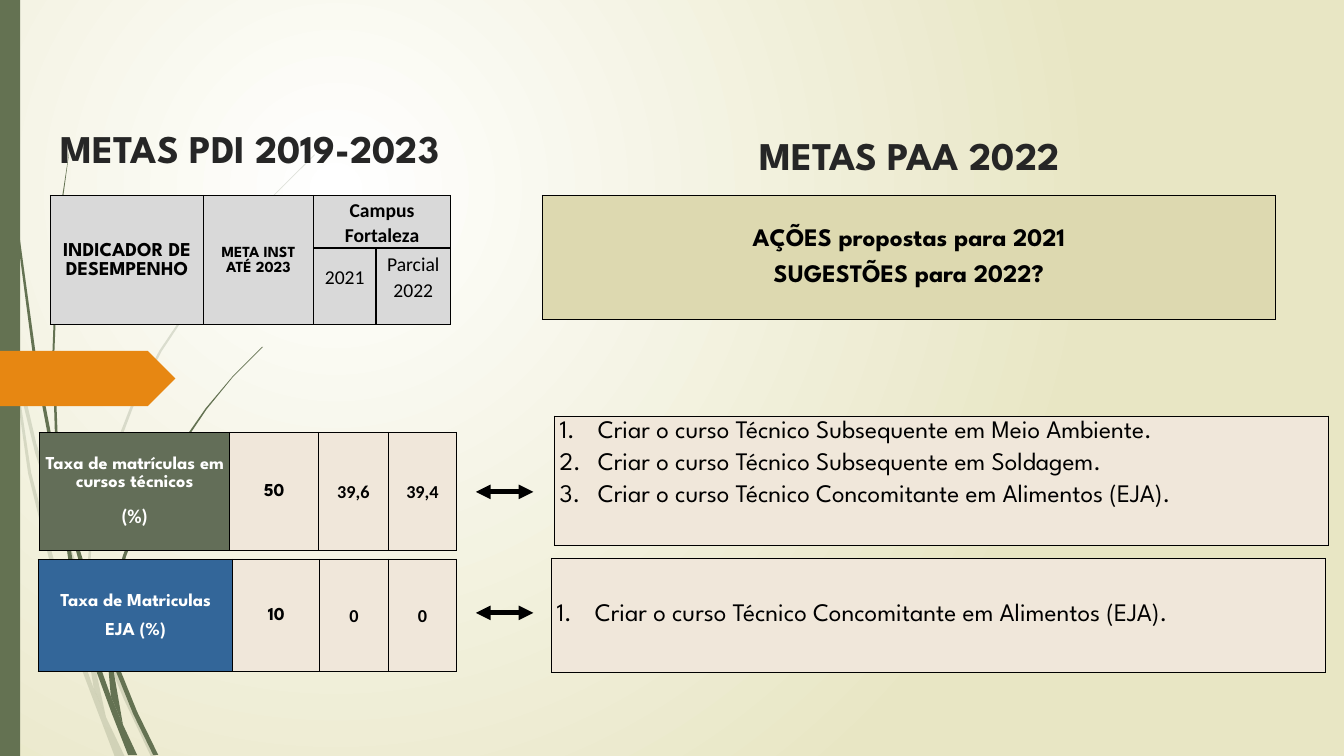
"""Build the slide that compares PDI targets with PAA 2022 actions."""
from dataclasses import dataclass, field

from lxml import etree
from pptx import Presentation, util as u
from pptx.dml.color import RGBColor
from pptx.enum import shapes as sh, text as tx
from pptx.oxml import ns

PX = 9144
WIDE, HIGH = 1333, 750
LEAGUE, PLAIN = "League Spartan", "Calibri"
HUES = {
    "white": "FFFFFF", "edge": "E8E6C4", "moss": "647252", "amber": "E78712",
    "black": "000000", "ink": "262626", "olive": "636E58", "blue": "336699",
    "sand": "F0E7DA", "straw": "DDD9B0", "grey": "D9D9D9",
}
MID, TOP, LOW = (tx.MSO_ANCHOR.MIDDLE, tx.MSO_ANCHOR.TOP, tx.MSO_ANCHOR.BOTTOM)


@dataclass
class Line:
    text: str
    form: dict = field(default_factory=dict)


@dataclass
class Cell:
    lines: list[Line]
    fill: str
    anchor: tx.MSO_ANCHOR = MID
    above: int = 1
    below: int = 0


@dataclass
class Grid:
    left: int
    top: int
    cols: list[int]
    rows: list[int]
    cells: dict[tuple[int, int], Cell]
    spans: list[tuple[int, int, int, int]] = field(default_factory=list)


@dataclass
class Title:
    text: str
    box: tuple[int, int, int, int]
    anchor: tx.MSO_ANCHOR


def px(num: float) -> u.Emu:
    return u.Emu(round(num * PX))


def hue(name: str) -> RGBColor:
    return RGBColor.from_string(HUES[name])


def add(host, tag: str, **attrs: str):
    return etree.SubElement(host, ns.qn(tag), attrs)


def write(para, text: str, size: float = 13, font: str = LEAGUE, tint: str = "black",
          bold: bool = True, space: float = 1.07, after: float = 8, item: bool = False) -> None:
    para.alignment = tx.PP_ALIGN.JUSTIFY if item else tx.PP_ALIGN.CENTER
    para.line_spacing, para.space_after = space, u.Pt(after)
    if item:
        props = para._p.get_or_add_pPr()
        props.set("marL", str(px(38)))
        props.set("indent", str(-px(38)))
        add(props, "a:buFont", typeface="+mj-lt")
        add(props, "a:buAutoNum", type="arabicPeriod")
    run = para.add_run()
    run.text = text
    run.font.size, run.font.name, run.font.bold = u.Pt(size), font, bold
    run.font.color.rgb = hue(tint)


def fill_text(frame, lines: list[Line]) -> None:
    frame.word_wrap = True
    for spot, line in enumerate(lines):
        para = frame.add_paragraph() if spot else frame.paragraphs[0]
        write(para, line.text, **line.form)


def edge(cell) -> None:
    props = cell._tc.get_or_add_tcPr()
    for spot, side in enumerate("LRTB"):
        rule = etree.Element(ns.qn(f"a:ln{side}"), {"w": str(u.Pt(1))})
        add(add(rule, "a:solidFill"), "a:srgbClr", val=HUES["black"])
        props.insert(spot, rule)


def draw_grid(slide, grid: Grid) -> None:
    table = slide.shapes.add_table(
        len(grid.rows), len(grid.cols), px(grid.left), px(grid.top),
        px(sum(grid.cols)), px(sum(grid.rows))).table
    table.first_row = table.horz_banding = False
    for col, wide in zip(table.columns, grid.cols):
        col.width = px(wide)
    for row, high in zip(table.rows, grid.rows):
        row.height = px(high)
    for cell in table.iter_cells():
        edge(cell)
    for row, col, last, end in grid.spans:
        table.cell(row, col).merge(table.cell(last, end))
    for (row, col), data in grid.cells.items():
        cell = table.cell(row, col)
        cell.fill.solid()
        cell.fill.fore_color.rgb = hue(data.fill)
        cell.vertical_anchor = data.anchor
        cell.margin_left = cell.margin_right = px(5)
        cell.margin_top, cell.margin_bottom = px(data.above), px(data.below)
        fill_text(cell.text_frame, data.lines)


def draw_title(slide, title: Title) -> None:
    frame = slide.shapes.add_textbox(*map(px, title.box)).text_frame
    frame.vertical_anchor = title.anchor
    fill_text(frame, [Line(title.text, dict(size=28, tint="ink", space=1.0, after=0))])


def draw_arrow(slide, mid: int) -> None:
    line = slide.shapes.add_connector(sh.MSO_CONNECTOR.STRAIGHT, px(472), px(mid), px(529), px(mid))
    line.line.width = u.Pt(3.5)
    line.line.color.rgb = hue("black")
    stroke = line.line._get_or_add_ln()
    for tag in ("a:headEnd", "a:tailEnd"):
        add(stroke, tag, type="triangle")
    add(line._element.spPr, "a:effectLst")


def paint(shape, tint: str, alpha: int = 100) -> None:
    shape.shadow.inherit = False
    shape.fill.solid()
    shape.fill.fore_color.rgb = hue(tint)
    shape.line.fill.background()
    if alpha < 100:
        add(shape._element.spPr.find(".//" + ns.qn("a:srgbClr")), "a:alpha", val=str(alpha * 1000))


def draw_blade(slide, dots: list[tuple[int, int]], alpha: int) -> None:
    pen = slide.shapes.build_freeform(*dots[0], scale=float(PX))
    pen.add_line_segments(dots[1:], close=True)
    paint(pen.convert_to_shape(), "moss", alpha)


def draw_back(slide) -> None:
    fill = slide.background.fill
    fill.gradient()
    for stop, name in zip(fill.gradient_stops, ("white", "edge")):
        stop.color.rgb = hue(name)
    grad = slide.element.find(".//" + ns.qn("a:gradFill"))
    grad.remove(grad.find(ns.qn("a:lin")))
    add(add(grad, "a:path", path="circle"), "a:fillToRect",
        l="50000", t="50000", r="100000", b="100000")


PALE = [
    [(11, 350), (9, 322), (0, 282), (0, 299), (10, 344)],
    [(58, 522), (84, 599), (85, 586), (62, 520), (36, 440), (14, 345), (17, 376), (35, 450)],
    [(92, 607), (88, 596), (88, 610), (123, 694), (150, 751), (155, 751), (127, 692)],
    [(93, 683), (70, 619), (31, 469), (17, 376), (11, 350), (28, 470), (65, 621), (92, 693),
     (114, 751), (124, 751), (105, 711)],
    [(84, 599), (87, 646), (93, 683), (105, 711), (91, 646), (88, 608)],
    [(88, 584), (92, 522), (110, 462), (132, 404), (160, 349), (229, 245), (268, 198), (312, 154),
     (312, 153), (268, 197), (228, 244), (158, 348), (130, 402), (107, 461), (90, 521), (85, 584),
     (84, 599), (88, 610)],
]
DARK = [
    [(7, 110), (17, 233), (33, 355), (56, 477), (64, 505), (60, 472), (55, 453), (36, 355),
     (19, 232), (8, 109), (5, 48), (4, 0), (3, 0), (4, 48)],
    [(88, 592), (106, 645), (106, 631), (93, 590), (75, 532), (60, 472), (64, 505)],
    [(113, 649), (110, 641), (111, 656), (132, 708), (152, 749), (157, 749), (136, 706)],
    [(110, 691), (98, 657), (72, 556), (64, 505), (57, 477), (68, 557), (93, 659), (111, 708),
     (127, 749), (136, 749), (122, 719)],
    [(60, 472), (58, 453), (54, 349), (58, 245), (63, 193), (70, 141), (62, 193), (56, 245),
     (52, 349), (55, 449)],
    [(111, 633), (115, 592), (125, 552), (140, 513), (158, 476), (205, 406), (231, 374), (261, 344),
     (260, 344), (231, 373), (204, 405), (156, 474), (137, 512), (122, 551), (111, 590), (106, 631),
     (106, 645), (111, 656)],
    [(106, 645), (110, 691), (122, 719), (111, 656)],
]
HEAD = dict(size=14, after=0)
SMALL = dict(size=11, after=0)
NUM = dict(font=PLAIN)
LIGHT = dict(size=14, font=PLAIN, bold=False, after=0)
PALE_INK = dict(tint="white")
LIST = dict(size=18, bold=False, space=1.0, after=6, item=True)
CALL = dict(size=18)
FOOD = Line("Criar o curso Técnico Concomitante em Alimentos (EJA).", LIST)


def rate(left: int, top: int, cols: list[int], high: int, label: Cell,
         goal: str, year: str, part: str) -> Grid:
    cells = {(0, 0): label, (0, 1): Cell([Line(goal)], "sand")}
    for col, num in enumerate((year, part), 2):
        cells[0, col] = Cell([Line(num, NUM)], "sand")
    return Grid(left, top, cols, [high], cells)


GRIDS = [
    rate(39, 429, [189, 88, 69, 68], 117,
         Cell([Line("Taxa de matrículas em cursos técnicos", PALE_INK),
               Line("(%)", dict(size=14, font=PLAIN, tint="white"))], "olive"), "50", "39,6", "39,4"),
    Grid(550, 413, [768], [128], {(0, 0): Cell(
        [Line("Criar o curso Técnico Subsequente em Meio Ambiente.", LIST),
         Line("Criar o curso Técnico Subsequente em Soldagem.", LIST), FOOD], "sand", TOP, 5)}),
    rate(38, 555, [193, 86, 68, 68], 111,
         Cell([Line("Taxa de Matriculas", PALE_INK), Line("EJA (%)", PALE_INK)], "blue"), "10", "0", "0"),
    Grid(547, 554, [768], [113], {(0, 0): Cell([FOOD], "sand")}),
    Grid(538, 194, [727], [123], {(0, 0): Cell(
        [Line("AÇÕES propostas para 2021", CALL), Line("SUGESTÕES para 2022?", CALL)], "straw")}),
    Grid(50, 194, [152, 109, 62, 74], [52, 76], {
        (0, 0): Cell([Line("INDICADOR DE DESEMPENHO", HEAD)], "grey"),
        (0, 1): Cell([Line("META INST", SMALL), Line("ATÉ 2023", SMALL)], "grey"),
        (0, 2): Cell([Line("Campus Fortaleza", HEAD | NUM)], "grey"),
        (1, 2): Cell([Line("2021", LIGHT)], "grey", below=20),
        (1, 3): Cell([Line("Parcial 2022", LIGHT)], "grey", below=20),
    }, [(0, 0, 1, 0), (0, 1, 1, 1), (0, 2, 0, 3)]),
]
TITLES = [Title("METAS PDI 2019-2023", (-27, 97, 550, 99), MID),
          Title("METAS PAA 2022", (641, 112, 522, 70), LOW)]


def main() -> None:
    deck = Presentation()
    deck.slide_width, deck.slide_height = px(WIDE), px(HIGH)
    slide = deck.slides.add_slide(deck.slide_layouts[6])
    draw_back(slide)
    for blades, alpha in ((PALE, 20), (DARK, 100)):
        for dots in blades:
            draw_blade(slide, dots, alpha)
    for kind, box, tint in ((sh.MSO_SHAPE.RECTANGLE, (0, 0, 20, HIGH), "moss"),
                            (sh.MSO_SHAPE.PENTAGON, (0, 348, 174, 55), "amber")):
        paint(slide.shapes.add_shape(kind, *map(px, box)), tint)
    for grid in GRIDS:
        draw_grid(slide, grid)
    for mid in (488, 608):
        draw_arrow(slide, mid)
    for title in TITLES:
        draw_title(slide, title)
    deck.save("out.pptx")


if __name__ == "__main__":
    main()
